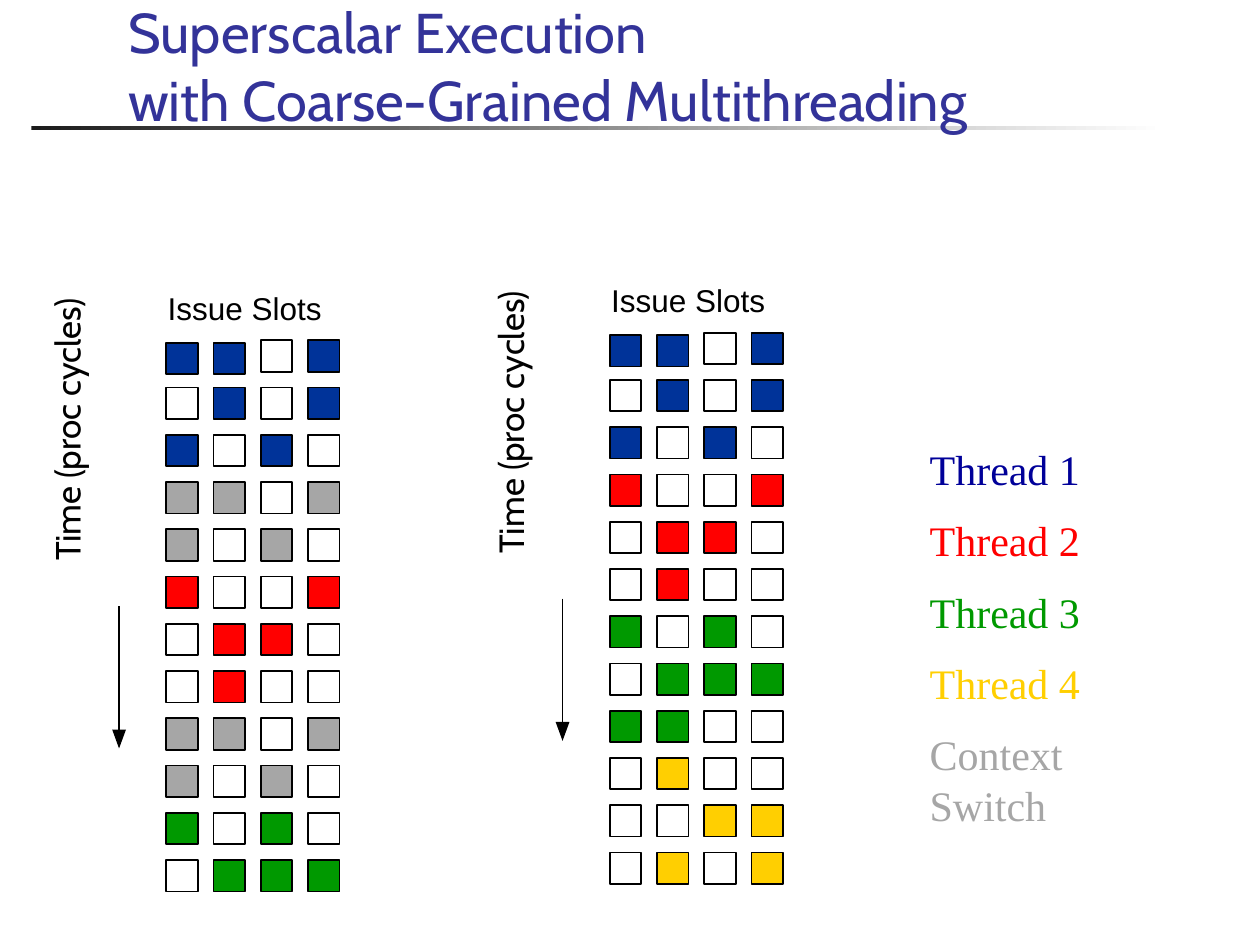
from dataclasses import dataclass

from lxml import etree
from pptx import Presentation
from pptx.dml.color import RGBColor
from pptx.enum.shapes import MSO_CONNECTOR, MSO_SHAPE
from pptx.enum.text import MSO_ANCHOR
from pptx.oxml.ns import qn
from pptx.util import Inches, Pt

RECTANGLE = MSO_SHAPE.RECTANGLE
STRAIGHT = MSO_CONNECTOR.STRAIGHT
BOTTOM = MSO_ANCHOR.BOTTOM


@dataclass(frozen=True)
class Theme:
    title: str = "333399"
    ink: str = "000000"
    rule_start: str = "1C1C1C"
    rule_end: str = "FFFFFF"
    heading_font: str = "Cabin"
    label_font: str = "Arial"
    legend_font: str = "Times New Roman"
    title_size: int = 32
    axis_size: int = 20
    label_size: int = 18
    legend_size: int = 24
    legend_gap: int = 12
    line_width: int = 1


THEME = Theme()

# One letter per issue slot; a dot is an idle slot
SLOT_COLOURS = {"1": "003399", "2": "FF0000", "3": "009900", "4": "FFCF01", "S": "A6A6A6"}
SWITCHING_ROWS = ["11.1", ".1.1", "1.1.", "SS.S", "S.S.", "2..2",
                  ".22.", ".2..", "SS.S", "S.S.", "3.3.", ".333"]
NO_SWITCH_ROWS = ["11.1", ".1.1", "1.1.", "2..2", ".22.", ".2..",
                  "3.3.", ".333", "33..", ".4..", "..44", ".4.4"]
LEGEND = [("Thread 1", "000099"), ("Thread 2", "FF0000"), ("Thread 3", "009900"),
          ("Thread 4", "FFCF01"), ("Context Switch", "A6A6A6")]

SLOT_SIZE = 0.25
SLOT_PITCH = 0.375
FIRST_ROW_NUDGE = 0.02


def colour(value):
    return RGBColor.from_string(value)


def add_text(page, box, lines, font, size):
    """Add a text box; lines holds (text, colour) for each paragraph."""
    shape = page.shapes.add_textbox(*map(Inches, box))
    frame = shape.text_frame
    frame.word_wrap = True
    frame.text = "\n".join(text for text, _ in lines)
    for para, (_, value) in zip(frame.paragraphs, lines):
        for span in para.runs:
            span.font.name = font
            span.font.size = Pt(size)
            span.font.color.rgb = colour(value)
    return shape


def add_heading(page, left, top, width, height):
    # Fading rule under the title
    rule = page.shapes.add_shape(RECTANGLE, Inches(0.25), Inches(1), Inches(9), Inches(0.03))
    rule.shadow.inherit = False
    rule.line.fill.background()
    rule.fill.gradient()
    rule.fill.gradient_angle = 0
    for stop, value in zip(rule.fill.gradient_stops, (THEME.rule_start, THEME.rule_end)):
        stop.color.rgb = colour(value)

    # Two-line title
    title = add_text(page, (left, top, width, height),
                     [("Superscalar Execution\vwith Coarse-Grained Multithreading", THEME.title)],
                     THEME.heading_font, THEME.title_size)
    title.text_frame.vertical_anchor = BOTTOM


def add_time_arrow(page, left, top, height):
    group = page.shapes.add_group_shape()
    head_width, head_height = 0.11, 0.15
    middle, tip = left + head_width / 2, top + height
    shaft = group.shapes.add_connector(STRAIGHT, Inches(middle), Inches(top),
                                       Inches(middle), Inches(tip - 0.04))
    shaft.line.color.rgb = colour(THEME.ink)
    shaft.line.width = Pt(THEME.line_width)
    etree.SubElement(shaft._element.spPr, qn("a:effectLst"))

    base = Inches(tip - head_height)
    builder = group.shapes.build_freeform(Inches(middle), Inches(tip))
    builder.add_line_segments([(Inches(left), base), (Inches(left + head_width), base)])
    head = builder.convert_to_shape()
    head.shadow.inherit = False
    head.fill.solid()
    head.fill.fore_color.rgb = colour(THEME.ink)
    head.line.fill.background()


def add_slot(page, left, top, code):
    slot = page.shapes.add_shape(RECTANGLE, Inches(left), Inches(top),
                                 Inches(SLOT_SIZE), Inches(SLOT_SIZE))
    slot.shadow.inherit = False
    slot.line.color.rgb = colour(THEME.ink)
    slot.line.width = Pt(THEME.line_width)
    if code in SLOT_COLOURS:
        slot.fill.solid()
        slot.fill.fore_color.rgb = colour(SLOT_COLOURS[code])
    else:
        slot.fill.background()


def add_issue_diagram(page, left, top, rows):
    """Draw one schedule; left and top locate its slot grid."""
    # Time axis
    axis = add_text(page, (left - 2.41, top, 3.29, 0.41),
                    [("Time (proc cycles)", THEME.ink)], THEME.heading_font, THEME.axis_size)
    axis.rotation = 270
    axis.text_frame.paragraphs[0].line_spacing = 0.9
    add_time_arrow(page, left - 0.43, top + 2.11, 1.13)

    # Column label
    label = add_text(page, (left + 0.01, top - 0.41, 1.31, 0.35),
                     [("Issue Slots", THEME.ink)], THEME.label_font, THEME.label_size)
    frame = label.text_frame
    frame.word_wrap = False
    frame.margin_left = frame.margin_right = frame.margin_top = frame.margin_bottom = 0

    # Slot grid: the first two slots of the first row sit slightly lower
    for row, codes in enumerate(rows):
        for column, code in enumerate(codes):
            nudge = FIRST_ROW_NUDGE if row == 0 and column < 2 else 0
            add_slot(page, left + column * SLOT_PITCH, top + row * SLOT_PITCH + nudge, code)


def add_legend(page, left, top, width, height):
    legend = add_text(page, (left, top, width, height), LEGEND,
                      THEME.legend_font, THEME.legend_size)
    for para in legend.text_frame.paragraphs[1:]:
        para.space_before = Pt(THEME.legend_gap)


def main():
    deck = Presentation()
    deck.slide_width, deck.slide_height = Inches(10), Inches(7.5)
    page = deck.slides.add_slide(deck.slide_layouts[6])
    add_heading(page, 0.92, 0.58, 8.86, 0.52)
    add_issue_diagram(page, 1.32, 2.7, SWITCHING_ROWS)
    add_issue_diagram(page, 4.84, 2.64, NO_SWITCH_ROWS)
    add_legend(page, 7.28, 3.47, 2.17, 3.33)
    deck.save("out.pptx")


if __name__ == "__main__":
    main()
